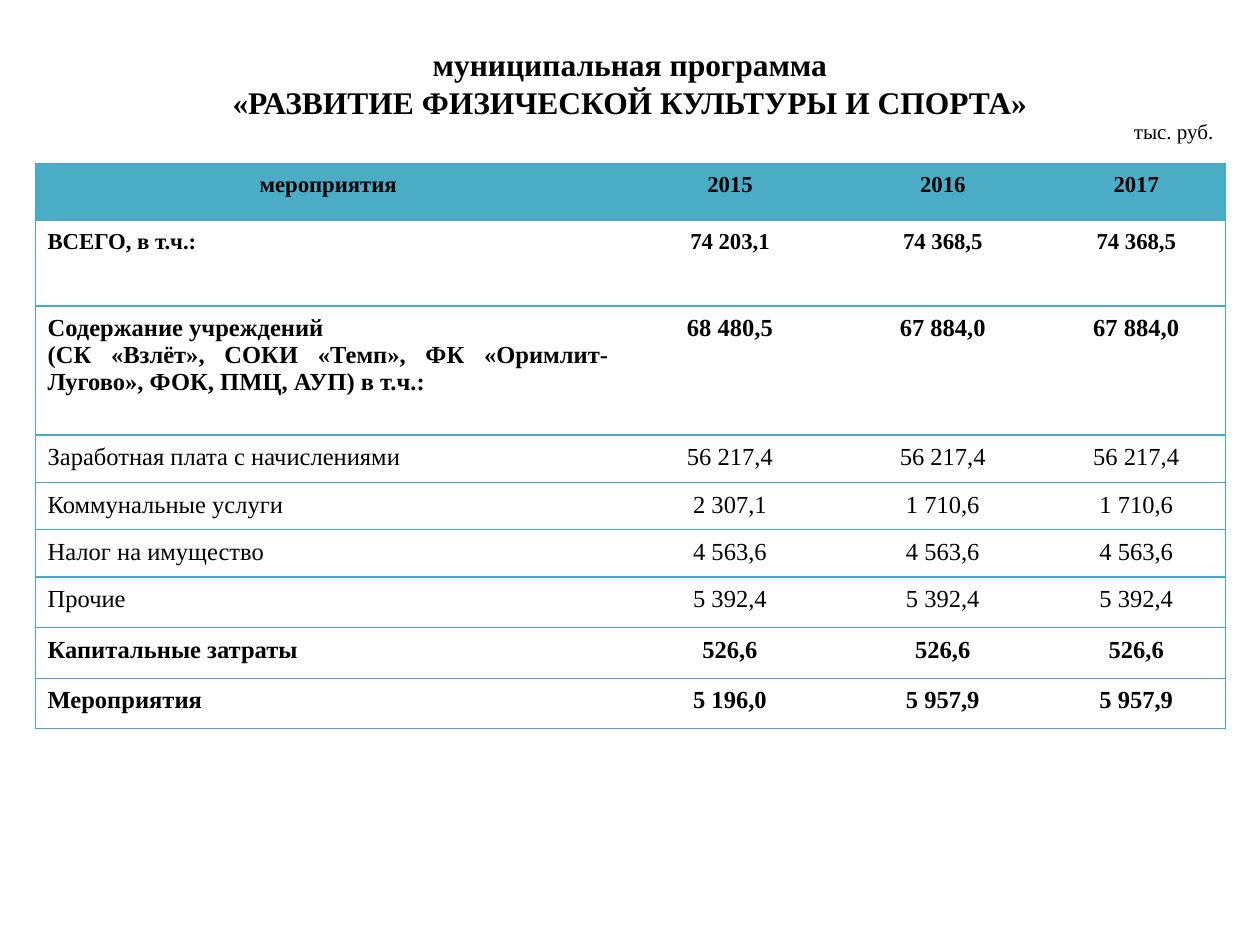
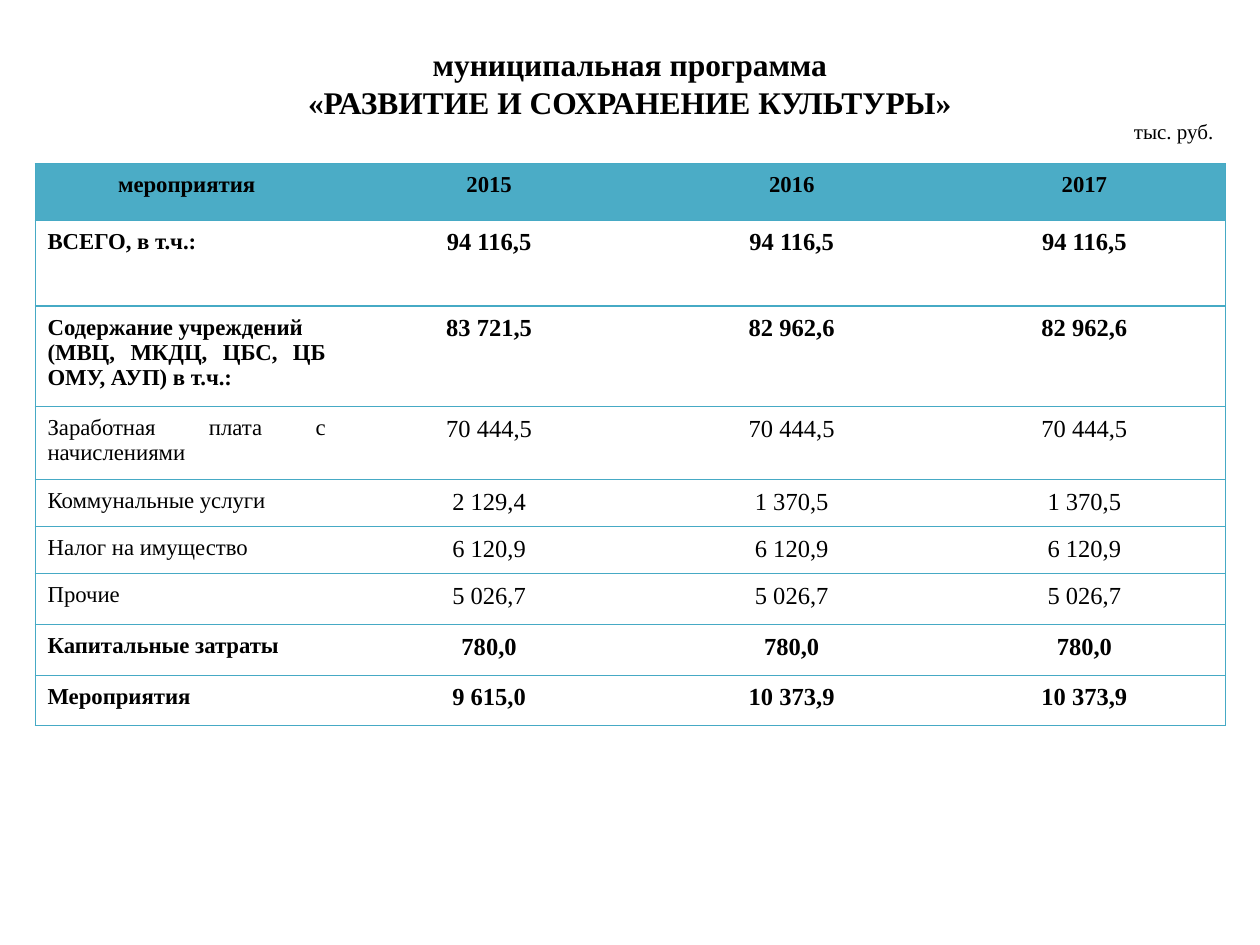
from dataclasses import dataclass

from lxml import etree
from pptx import Presentation
from pptx import util as u
from pptx.dml.color import RGBColor
from pptx.enum import text as t
from pptx.oxml import ns


@dataclass(frozen=True)
class Theme:
    """Colours, font and type sizes of all slides."""
    font: str = "Times New Roman"
    ink: str = "000000"
    head: str = "4BACC6"
    rule: str = "46AAC5"
    title: int = 18
    unit: int = 12
    small: int = 13
    big: int = 14


THEME = Theme()
BARE = "{2D5ABB26-0587-4C30-8999-92F81FD0307C}"
HEADS = ["мероприятия", "2015", "2016", "2017"]
NAMES = ["Заработная плата с начислениями", "Коммунальные услуги",
         "Налог на имущество", "Прочие", "Капитальные затраты", "Мероприятия"]
PLAIN = NAMES[:4]
LOW = [0.95, 0.91, 0.91, 1.02, 1.02, 1.02]

SPORT = {
    "name": "«РАЗВИТИЕ ФИЗИЧЕСКОЙ КУЛЬТУРЫ И СПОРТА»",
    "units": "(СК «Взлёт», СОКИ «Темп», ФК «Оримлит-Лугово», ФОК, ПМЦ, АУП) в т.ч.:",
    "cols": [11.81, 4.39, 4.19, 3.61],
    "tall": 2.6,
    "label": THEME.big,
    "total": THEME.small,
    "sums": [
        ["74 203,1", "74 368,5", "74 368,5"],
        ["68 480,5", "67 884,0", "67 884,0"],
        ["56 217,4", "56 217,4", "56 217,4"],
        ["2 307,1", "1 710,6", "1 710,6"],
        ["4 563,6", "4 563,6", "4 563,6"],
        ["5 392,4", "5 392,4", "5 392,4"],
        ["526,6", "526,6", "526,6"],
        ["5 196,0", "5 957,9", "5 957,9"],
    ],
}
ARTS = {
    "name": "«РАЗВИТИЕ И СОХРАНЕНИЕ КУЛЬТУРЫ»",
    "units": "(МВЦ, МКДЦ, ЦБС, ЦБ ОМУ, АУП) в т.ч.:",
    "cols": [6.1, 6.1, 6.1, 5.7],
    "tall": 2.03,
    "label": THEME.small,
    "total": THEME.big,
    "sums": [
        ["94 116,5", "94 116,5", "94 116,5"],
        ["83 721,5", "82 962,6", "82 962,6"],
        ["70 444,5", "70 444,5", "70 444,5"],
        ["2 129,4", "1 370,5", "1 370,5"],
        ["6 120,9", "6 120,9", "6 120,9"],
        ["5 026,7", "5 026,7", "5 026,7"],
        ["780,0", "780,0", "780,0"],
        ["9 615,0", "10 373,9", "10 373,9"],
    ],
}


def add_run(para, words, size, bold=False):
    """Add one styled run to a paragraph."""
    run = para.add_run()
    run.text = words
    run.font.name = THEME.font
    run.font.size = u.Pt(size)
    run.font.bold = bold
    run.font.color.rgb = RGBColor.from_string(THEME.ink)


def add_box(slide, area, lines, size, align, bold=False):
    """Add a text box whose lines share one paragraph."""
    frame = slide.shapes.add_textbox(*map(u.Cm, area)).text_frame
    frame.word_wrap = True
    frame.vertical_anchor = t.MSO_ANCHOR.MIDDLE
    para = frame.paragraphs[0]
    para.alignment = align
    for i, line in enumerate(lines):
        if i:
            para.add_line_break()
        add_run(para, line, size, bold)


def add_rules(cell, sides):
    """Draw thin rules on the given sides of a cell."""
    props = cell._tc.get_or_add_tcPr()
    for side in sides:
        line = etree.SubElement(props, ns.qn(f"a:ln{side}"), w=str(u.Pt(0.75)))
        fill = etree.SubElement(line, ns.qn("a:solidFill"))
        etree.SubElement(fill, ns.qn("a:srgbClr"), val=THEME.rule)


def fill_cell(cell, lines, size, align, bold):
    """Write the paragraphs of a cell and set its margins."""
    cell.margin_left = cell.margin_right = u.Cm(0.25)
    cell.margin_top = cell.margin_bottom = u.Cm(0.18)
    frame = cell.text_frame
    for i, line in enumerate(lines):
        para = frame.add_paragraph() if i else frame.paragraphs[0]
        para.alignment = align
        add_run(para, line, size, bold)


def list_rows(plan):
    """Give the label lines, sums, label size, sum size and weight of each row."""
    small, big, label = THEME.small, THEME.big, plan["label"]
    total, upkeep, *rest = plan["sums"]
    rows = [([HEADS[0]], HEADS[1:], small, small, True),
            (["ВСЕГО, в т.ч.:"], total, small, plan["total"], True),
            (["Содержание учреждений", plan["units"]], upkeep, label, big, True)]
    rows += [([name], sums, label, big, name not in PLAIN)
             for name, sums in zip(NAMES, rest)]
    return rows


def add_grid(slide, plan):
    """Add the budget table of a programme."""
    rows, cols = list_rows(plan), plan["cols"]
    highs = [1.14, 1.73, plan["tall"], *LOW]
    area = map(u.Cm, (0.71, 3.3, sum(cols), sum(highs)))
    grid = slide.shapes.add_table(len(rows), len(cols), *area).table
    grid.horz_banding = False
    grid._tbl.tblPr.find(ns.qn("a:tableStyleId")).text = BARE
    for col, wide in zip(grid.columns, cols):
        col.width = u.Cm(wide)
    for r, (label, sums, first, other, bold) in enumerate(rows):
        grid.rows[r].height = u.Cm(highs[r])
        for c, lines in enumerate([label, *([s] for s in sums)]):
            cell = grid.cell(r, c)
            left = c == 0 and r > 0
            align = t.PP_ALIGN.JUSTIFY if left else t.PP_ALIGN.CENTER
            fill_cell(cell, lines, other if c else first, align, bold)
            edge = {0: "L", len(cols) - 1: "R"}.get(c, "")
            add_rules(cell, edge + "TB")
            if r:
                cell.fill.background()
            else:
                cell.fill.solid()
                cell.fill.fore_color.rgb = RGBColor.from_string(THEME.head)


def add_page(deck, plan):
    """Add the slide of one programme."""
    slide = deck.slides.add_slide(deck.slide_layouts[6])
    add_box(slide, (1.27, 0.76, 22.86, 1.83),
            ["муниципальная программа", plan["name"]],
            THEME.title, t.PP_ALIGN.CENTER, True)
    add_grid(slide, plan)
    add_box(slide, (20.9, 2.26, 3.81, 0.76), ["тыс. руб."],
            THEME.unit, t.PP_ALIGN.RIGHT)


def main():
    """Build and save the deck."""
    deck = Presentation()
    deck.slide_width, deck.slide_height = u.Cm(25.4), u.Cm(19.05)
    for plan in (SPORT, ARTS):
        add_page(deck, plan)
    deck.save("out.pptx")


if __name__ == "__main__":
    main()
